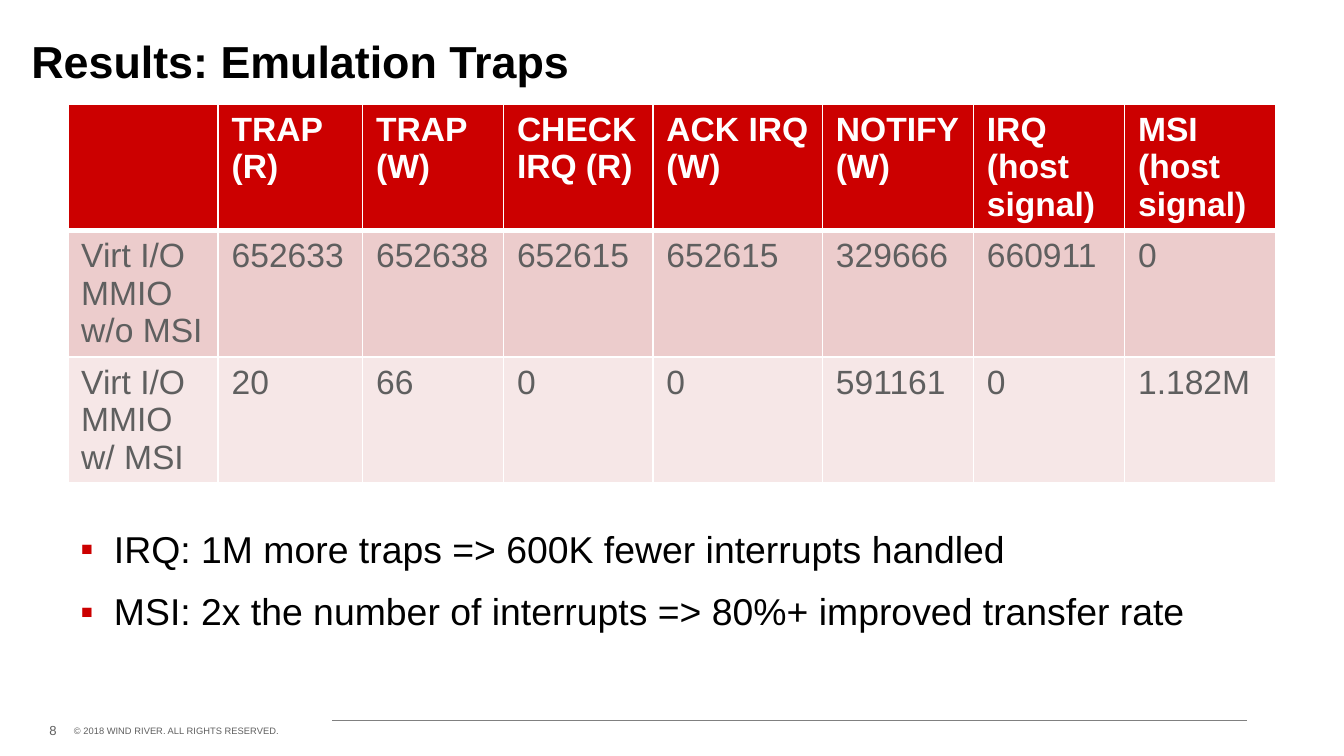
from pptx import Presentation
from pptx.dml.color import RGBColor
from pptx.enum.shapes import MSO_CONNECTOR
from pptx.enum.text import MSO_ANCHOR, MSO_AUTO_SIZE, PP_ALIGN
from pptx.oxml.ns import qn
from pptx.util import Pt
from lxml.etree import SubElement

COLORS = {"black": "000000", "white": "FFFFFF", "gray": "5F5F5F", "rule": "808080",
          "red": "CC0000", "rose": "ECCCCC", "blush": "F6E7E7"}
HEADERS = ["", "TRAP (R)", "TRAP (W)", "CHECK IRQ (R)", "ACK IRQ (W)",
           "NOTIFY(W)", "IRQ (host signal)", "MSI (host signal)"]
RESULTS = [
    ["Virt I/O MMIO w/o MSI", "652633", "652638", "652615", "652615", "329666", "660911", "0"],
    ["Virt I/O MMIO w/ MSI", "20", "66", "0", "0", "591161", "0", "1.182M"],
]
COLUMN_WIDTHS = [80.6, 77.4, 75.5, 80.1, 90.8, 80.9, 81, 80.9]
BULLETS = ["IRQ: 1M more traps => 600K fewer interrupts handled",
           "MSI: 2x the number of interrupts => 80%+ improved transfer rate"]


def rgb(name):
    """Return the named palette colour."""
    return RGBColor.from_string(COLORS[name])


def write(p, text, size=18, color="black", bold=False, align=PP_ALIGN.LEFT,
          spacing=None, before=None):
    """Add formatted text to a paragraph."""
    p.alignment = align
    if spacing:
        p.line_spacing = spacing
    if before:
        p.space_before = Pt(before)
    r = p.add_run()
    r.text = text
    r.font.name = "Arial"
    r.font.size = Pt(size)
    r.font.bold = bold
    r.font.color.rgb = rgb(color)


class SlideBuilder:
    """Hold the style and the current slide."""

    def __init__(self, prs):
        """Add a title-only slide."""
        self.slide = prs.slides.add_slide(prs.slide_layouts[5])

    def frame(self, sp, box, anchor=MSO_ANCHOR.MIDDLE, wrap=True, inset=(0, 0)):
        """Place a text shape and set up its frame."""
        sp.left, sp.top, sp.width, sp.height = [Pt(v) for v in box]
        tf = sp.text_frame
        tf.auto_size = MSO_AUTO_SIZE.NONE
        tf.word_wrap = wrap
        tf.vertical_anchor = anchor
        tf.margin_left = tf.margin_right = Pt(inset[0])
        tf.margin_top = tf.margin_bottom = Pt(inset[1])
        return tf

    def title(self, text, box):
        """Fill the title placeholder."""
        tf = self.frame(self.slide.shapes.title, box, MSO_ANCHOR.BOTTOM)
        write(tf.paragraphs[0], text, size=24, bold=True, spacing=0.9)

    def label(self, text, box, **fmt):
        """Add a one-line label."""
        sp = self.slide.shapes.add_textbox(0, 0, 0, 0)
        write(self.frame(sp, box, wrap=False).paragraphs[0], text, color="gray", **fmt)

    def bullets(self, items, box):
        """Add a bulleted list."""
        sp = self.slide.shapes.add_textbox(0, 0, 0, 0)
        tf = self.frame(sp, box, MSO_ANCHOR.TOP, inset=(7.2, 3.6))
        for i, item in enumerate(items):
            p = tf.add_paragraph() if i else tf.paragraphs[0]
            pPr = p._p.get_or_add_pPr()
            pPr.set("marL", str(Pt(18)))
            pPr.set("indent", str(Pt(-18)))
            clr = SubElement(pPr, qn("a:buClr"))
            SubElement(clr, qn("a:srgbClr"), val=COLORS["red"])
            SubElement(pPr, qn("a:buFont"), typeface="Arial")
            SubElement(pPr, qn("a:buChar"), char="▪")
            write(p, item, size=20, spacing=0.9, before=12 if i else None)

    def borders(self, cell, **widths):
        """Draw white cell borders of the given widths."""
        tcPr = cell._tc.get_or_add_tcPr()
        for side in "LRTB":
            ln = SubElement(tcPr, qn(f"a:ln{side}"), w=str(Pt(widths.get(side, 1))))
            fill = SubElement(ln, qn("a:solidFill"))
            SubElement(fill, qn("a:srgbClr"), val=COLORS["white"])

    def table(self, rows, fills, widths, left, top, row_height):
        """Add a table with a header row."""
        sp = self.slide.shapes.add_table(len(rows), len(widths), Pt(left), Pt(top),
                                         Pt(sum(widths)), Pt(row_height * len(rows)))
        table = sp.table
        for column, width in zip(table.columns, widths):
            column.width = Pt(width)
        for i, (row, fill) in enumerate(zip(rows, fills)):
            table.rows[i].height = Pt(row_height)
            header = i == 0
            for j, text in enumerate(row):
                cell = table.cell(i, j)
                self.borders(cell, T=3 if i == 1 else 1, B=3 if header else 1)
                cell.fill.solid()
                cell.fill.fore_color.rgb = rgb(fill)
                if text:
                    write(cell.text_frame.paragraphs[0], text, bold=header,
                          color="white" if header else "gray")

    def rule(self, x1, x2, y):
        """Add a thin horizontal line."""
        line = self.slide.shapes.add_connector(MSO_CONNECTOR.STRAIGHT,
                                               Pt(x1), Pt(y), Pt(x2), Pt(y))
        line.line.color.rgb = rgb("rule")
        line.line.width = Pt(0.67)
        SubElement(line._element.spPr, qn("a:effectLst"))


def main():
    """Build the emulation traps slide."""
    prs = Presentation()
    prs.slide_width, prs.slide_height = Pt(720), Pt(405)
    s = SlideBuilder(prs)
    s.label("8", (21.6, 386.6, 8.8, 9.4), size=7, align=PP_ALIGN.RIGHT)
    s.label("© 2018 WIND RIVER. ALL RIGHTS RESERVED.", (39.6, 388.8, 111, 5.8), size=5)
    s.rule(668, 178, 386)
    s.title("Results: Emulation Traps", (16.8, 20.9, 675, 26.6))
    s.table([HEADERS] + RESULTS, ["red", "rose", "blush"], COLUMN_WIDTHS, 36.3, 55.8, 67.5)
    s.bullets(BULLETS, (36, 280.8, 648, 85))
    prs.save("out.pptx")


if __name__ == "__main__":
    main()
